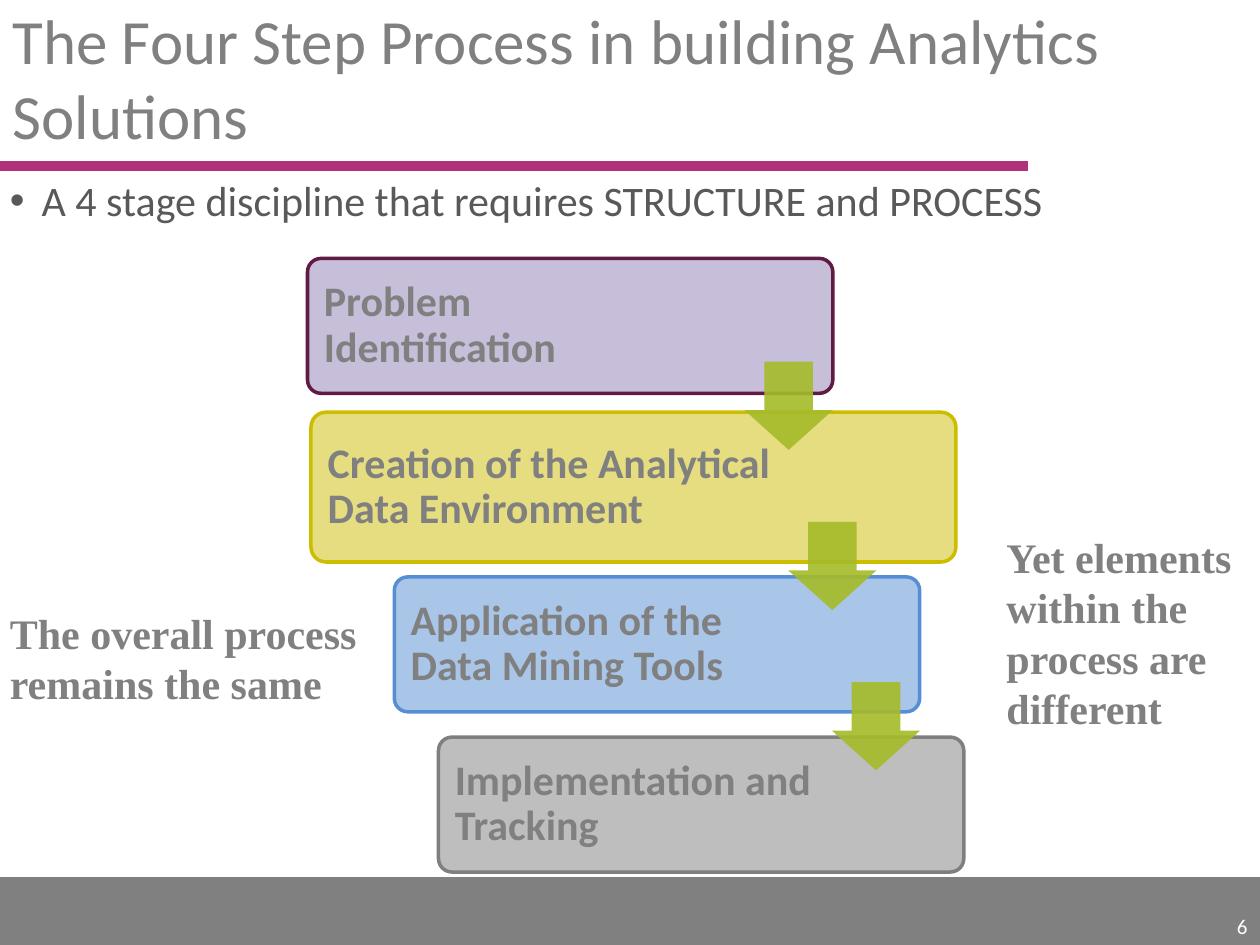
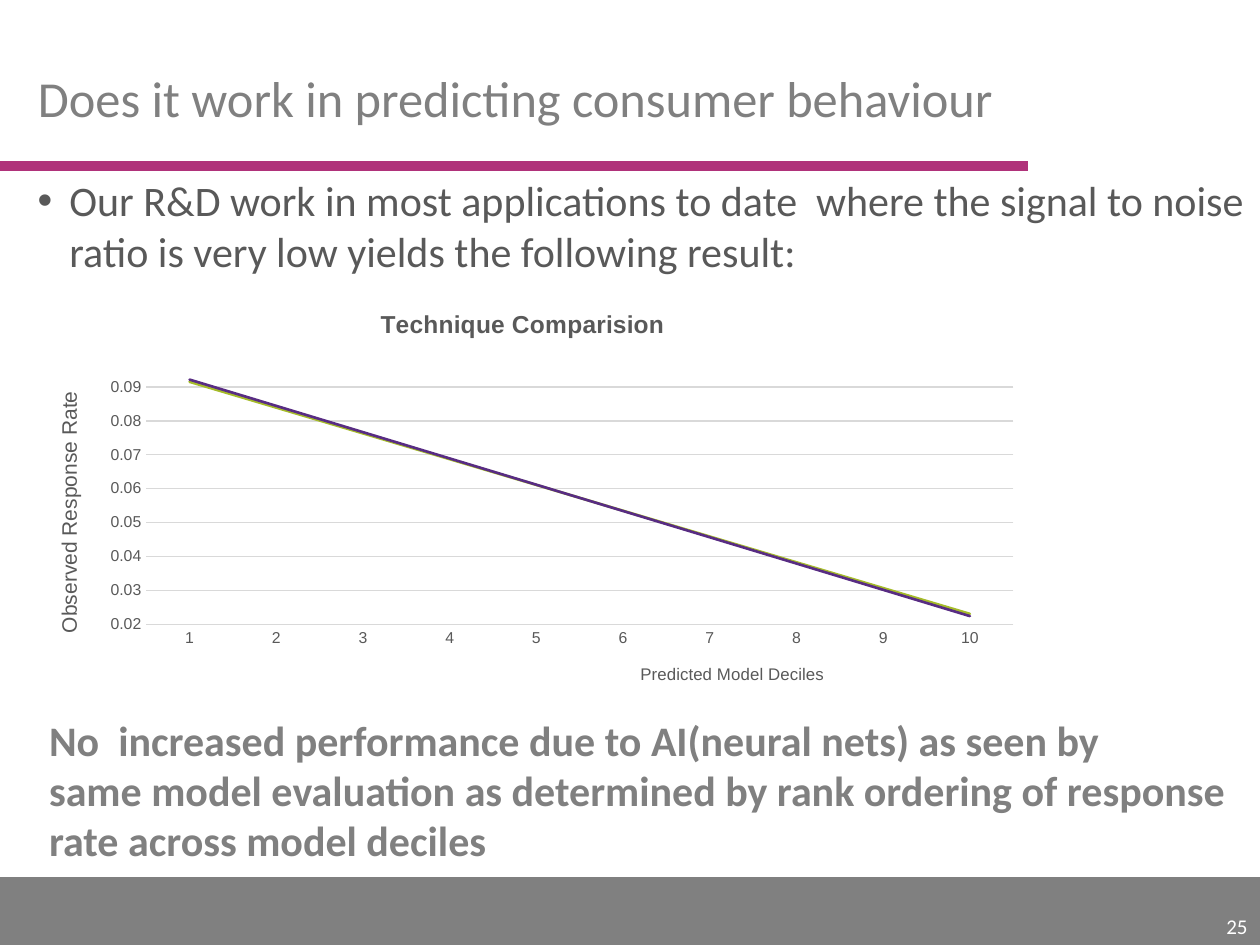
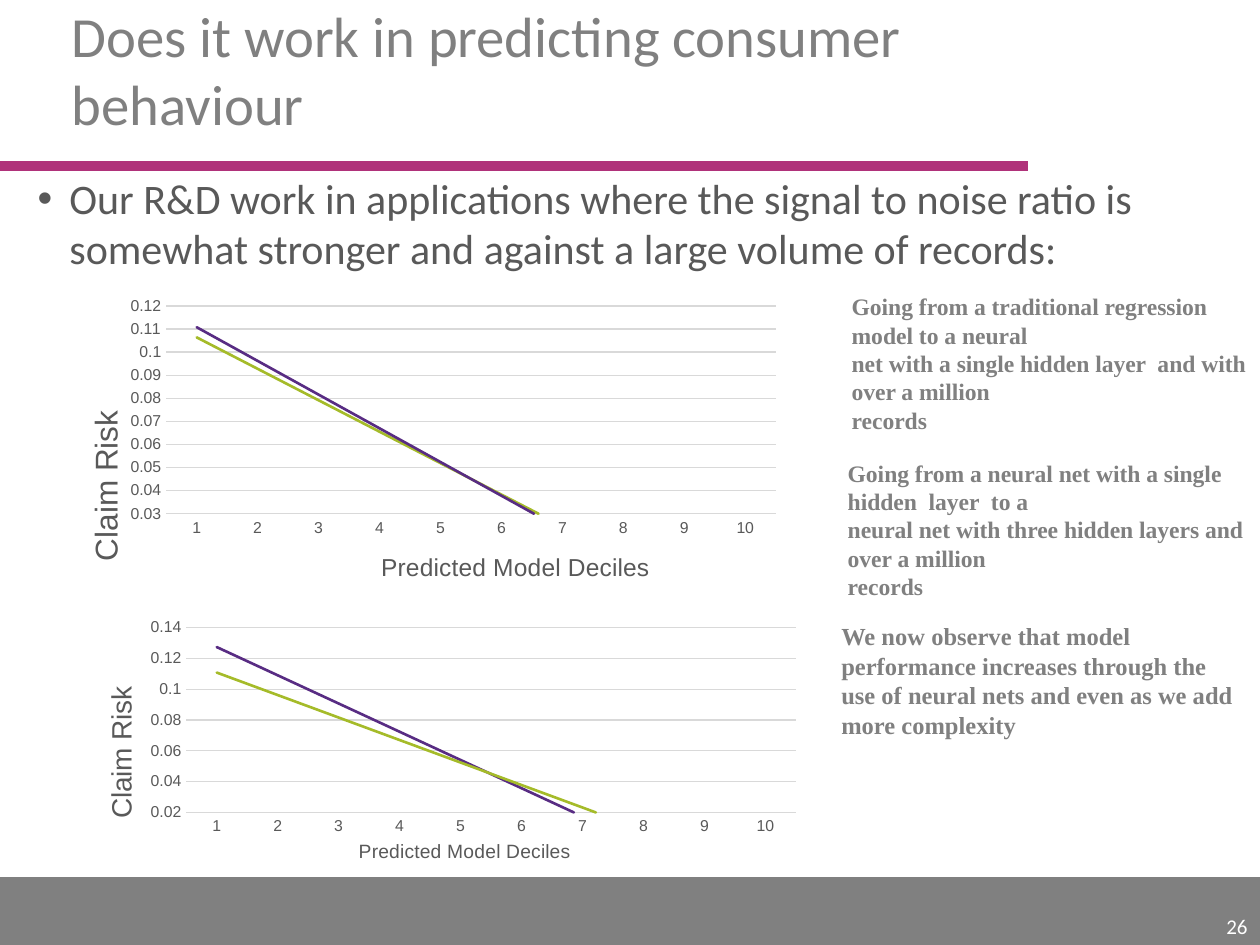
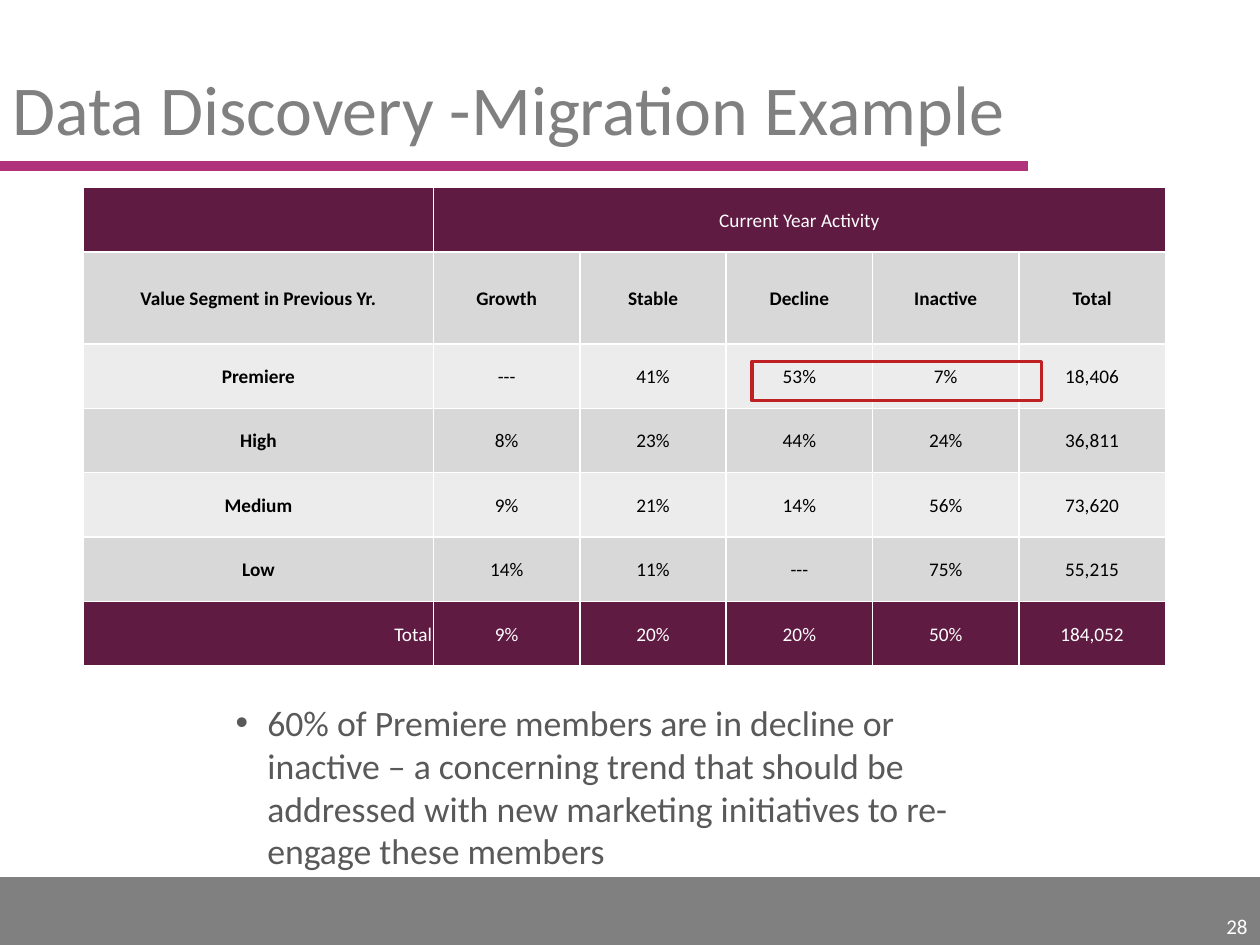
from typing import NamedTuple

from lxml.etree import SubElement
from pptx import Presentation
from pptx.chart.data import CategoryChartData
from pptx.dml.color import RGBColor
from pptx.enum.chart import XL_CHART_TYPE, XL_MARKER_STYLE, XL_TICK_MARK
from pptx.enum.shapes import MSO_CONNECTOR, MSO_SHAPE
from pptx.enum.text import MSO_ANCHOR, MSO_AUTO_SIZE, PP_ALIGN
from pptx.oxml import parse_xml
from pptx.oxml.ns import nsdecls, qn
from pptx.util import Cm, Pt

COLORS = {
    "grey": "808080",
    "text": "595959",
    "white": "FFFFFF",
    "black": "000000",
    "magenta": "B0327A",
    "plum": "5F1B42",
    "lilac": "917FB4",
    "mustard": "CCBD00",
    "blue": "558ED5",
    "mid_grey": "7F7F7F",
    "green": "A5BB29",
    "purple": "582C83",
    "grid": "D9D9D9",
    "band_dark": "D8D8D8",
    "band_light": "ECECEC",
    "red": "BF2024",
}
SANS = "Calibri"
SERIF = "Times New Roman"
CHART_FONT = "Arial"


class Box(NamedTuple):
    left: float
    top: float
    width: float
    height: float

    def lengths(self):
        return [Cm(value) for value in self]

    def inside(self, left, top, width, height):
        return Box(self.left + left, self.top + top, width, height)


def rgb(name):
    return RGBColor.from_string(COLORS[name])


def style_font(font, size, color, name=SANS, bold=False):
    font.size = Pt(size)
    font.name = name
    font.bold = bold
    font.color.rgb = rgb(color)


def write_text(frame, text, size, color, name=SANS, bold=False, align=PP_ALIGN.LEFT):
    frame.text = text
    for para in frame.paragraphs:
        para.alignment = align
        for span in para.runs:
            style_font(span.font, size, color, name, bold)


def add_text(page, box, text, size, color, name=SANS, bold=False,
             align=PP_ALIGN.LEFT, wrap=True):
    frame = page.shapes.add_textbox(*box.lengths()).text_frame
    frame.word_wrap = wrap
    write_text(frame, text, size, color, name, bold, align)
    return frame


def add_bullet(page, box, text, size=24):
    frame = add_text(page, box, text, size, "text")
    properties = frame.paragraphs[0]._p.get_or_add_pPr()
    properties.set("marL", str(Cm(0.64)))
    properties.set("indent", str(-Cm(0.64)))
    SubElement(properties, qn("a:buFont")).set("typeface", "Arial")
    SubElement(properties, qn("a:buChar")).set("char", "•")


def add_preset(page, preset, box, fill=None, line=None, line_width=2, opacity=100):
    shape = page.shapes.add_shape(preset, *box.lengths())
    shape.shadow.inherit = False
    if fill:
        shape.fill.solid()
        shape.fill.fore_color.rgb = rgb(fill)
        if opacity < 100:
            color = shape.element.xpath("p:spPr/a:solidFill/a:srgbClr")[0]
            SubElement(color, qn("a:alpha")).set("val", str(opacity * 1000))
    else:
        shape.fill.background()
    if line:
        shape.line.color.rgb = rgb(line)
        shape.line.width = Pt(line_width)
    else:
        shape.line.fill.background()
    return shape


def start_page(deck, number, title, title_box, title_size):
    page = deck.slides.add_slide(deck.slide_layouts[5])
    add_preset(page, MSO_SHAPE.RECTANGLE, Box(0, 17.7, 25.4, 1.35), "grey", "grey", 0.75)
    rule = page.shapes.add_connector(
        MSO_CONNECTOR.STRAIGHT, Cm(0), Cm(3.35), Cm(20.73), Cm(3.35))
    rule.line.color.rgb = rgb("magenta")
    rule.line.width = Pt(6)
    SubElement(rule.element.spPr, qn("a:effectLst"))

    heading = page.shapes.title
    heading.left, heading.top, heading.width, heading.height = title_box.lengths()
    frame = heading.text_frame
    frame.word_wrap = True
    frame.auto_size = MSO_AUTO_SIZE.NONE
    frame.vertical_anchor = MSO_ANCHOR.BOTTOM
    write_text(frame, title, title_size, "grey")

    footer = add_text(page, Box(20.12, 18.24, 5.28, 0.81), str(number), 12, "white",
                      align=PP_ALIGN.RIGHT)
    footer.vertical_anchor = MSO_ANCHOR.BOTTOM
    return page


def add_steps(page, box):
    steps = [
        ("Problem Identification", (0, 0, 10.59, 2.72), "lilac", "plum"),
        ("Creation of the Analytical Data Environment", (0.07, 3.1, 13, 3.02),
         "mustard", "mustard"),
        ("Application of the Data Mining Tools", (1.75, 6.42, 10.59, 2.72), "blue", "blue"),
        ("Implementation and Tracking", (2.64, 9.65, 10.59, 2.72), "mid_grey", "mid_grey"),
    ]
    for text, place, fill, line in steps:
        step = add_preset(page, MSO_SHAPE.ROUNDED_RECTANGLE, box.inside(*place),
                          fill, line, opacity=50)
        step.adjustments[0] = 0.1
        frame = step.text_frame
        frame.word_wrap = True
        frame.vertical_anchor = MSO_ANCHOR.MIDDLE
        frame.margin_left = Cm(0.25)
        frame.margin_right = Cm(2.9)
        write_text(frame, text, 24, "grey", bold=True)
        frame.paragraphs[0].line_spacing = 0.9
    for index in range(len(steps) - 1):
        place = box.inside(8.81 + 0.88 * index, 2.08 + 3.23 * index, 1.78, 1.78)
        arrow = add_preset(page, MSO_SHAPE.DOWN_ARROW, place, "green", opacity=90)
        arrow.adjustments[0] = 0.55
        arrow.adjustments[1] = 0.45


def place_in_chart(parent, index, x, y, width=None, height=None):
    present = parent.find(qn("c:layout"))
    if present is not None:
        parent.remove(present)
    layout = parse_xml(f"<c:layout {nsdecls('c')}><c:manualLayout/></c:layout>")
    entries = [("xMode", "edge"), ("yMode", "edge"), ("x", x), ("y", y)]
    if width:
        entries = [("layoutTarget", "inner")] + entries + [("w", width), ("h", height)]
    for tag, value in entries:
        SubElement(layout[0], qn(f"c:{tag}")).set("val", str(value))
    parent.insert(index, layout)


def write_chart_title(title, text, size, x, y, bold=False):
    write_text(title.text_frame, text, size, "text", CHART_FONT, bold, PP_ALIGN.CENTER)
    place_in_chart(title.element, 1, x, y)


def add_trend(series, color):
    series.smooth = False
    series.marker.style = XL_MARKER_STYLE.NONE
    series.format.line.fill.background()
    trend = parse_xml(
        f'<c:trendline {nsdecls("c", "a")}><c:spPr><a:ln w="{Pt(1.5)}" cap="rnd">'
        f'<a:solidFill><a:srgbClr val="{COLORS[color]}"/></a:solidFill></a:ln></c:spPr>'
        '<c:trendlineType val="linear"/><c:dispRSqr val="0"/><c:dispEq val="0"/>'
        '</c:trendline>')
    series._element.find(qn("c:cat")).addprevious(trend)


def add_decile_chart(page, box, plot, scale, series, value_title, category_title, title=None):
    data = CategoryChartData(number_format="General")
    data.categories = [str(decile) for decile in range(1, 11)]
    for index, (values, _) in enumerate(series, 1):
        data.add_series(f"Series {index}", values)
    chart = page.shapes.add_chart(XL_CHART_TYPE.LINE, *box.lengths(), data).chart
    style_font(chart.font, 10, "black", CHART_FONT)
    chart.has_legend = False
    chart.has_title = title is not None
    if title:
        write_chart_title(chart.chart_title, *title, bold=True)
    chart.plots[0].vary_by_categories = False
    for line, (_, color) in zip(chart.plots[0].series, series):
        add_trend(line, color)

    for axis in (chart.category_axis, chart.value_axis):
        axis.major_tick_mark = XL_TICK_MARK.NONE
        axis.minor_tick_mark = XL_TICK_MARK.NONE
        style_font(axis.tick_labels.font, 9, "text", CHART_FONT)
    chart.category_axis.format.line.color.rgb = rgb("grid")
    chart.category_axis.format.line.width = Pt(0.75)
    value_axis = chart.value_axis
    value_axis.minimum_scale, value_axis.maximum_scale, value_axis.major_unit = scale
    value_axis.format.line.fill.background()
    value_axis.has_major_gridlines = True
    value_axis.major_gridlines.format.line.color.rgb = rgb("grid")
    value_axis.major_gridlines.format.line.width = Pt(0.75)

    write_chart_title(chart.category_axis.axis_title, "Predicted Model Deciles", *category_title)
    write_chart_title(value_axis.axis_title, *value_title)
    rotation = value_axis.axis_title.element.xpath(".//a:bodyPr")[0]
    rotation.set("rot", "-5400000")
    rotation.set("vert", "horz")
    place_in_chart(chart.element.xpath("c:chart/c:plotArea")[0], 0, *plot)


def format_cell(cell, text, fill, color, bold, align):
    properties = cell._tc.get_or_add_tcPr()
    for side in ("lnL", "lnR", "lnT", "lnB"):
        border = SubElement(properties, qn(f"a:{side}"))
        border.set("w", str(Pt(1)))
        paint = SubElement(border, qn("a:solidFill"))
        SubElement(paint, qn("a:srgbClr")).set("val", COLORS["white"])
    cell.fill.solid()
    cell.fill.fore_color.rgb = rgb(fill)
    cell.margin_left = cell.margin_right = cell.margin_top = Cm(0.03)
    cell.margin_bottom = Cm(0)
    cell.vertical_anchor = MSO_ANCHOR.MIDDLE
    if text:
        write_text(cell.text_frame, text, 11, color, bold=bold, align=align)


def add_migration_table(page, box):
    rows = [
        ["", "Current Year Activity", "", "", "", ""],
        ["Value Segment in Previous Yr.", "Growth", "Stable", "Decline", "Inactive", "Total"],
        ["Premiere", "---", "41%", "53%", "7%", "18,406"],
        ["High", "8%", "23%", "44%", "24%", "36,811"],
        ["Medium", "9%", "21%", "14%", "56%", "73,620"],
        ["Low", "14%", "11%", "---", "75%", "55,215"],
        ["Total", "9%", "20%", "20%", "50%", "184,052"],
    ]
    last = len(rows) - 1
    table = page.shapes.add_table(len(rows), len(rows[0]), *box.lengths()).table
    table.first_row = False
    table.horz_banding = False
    for index, column in enumerate(table.columns):
        column.width = Cm(2.95 if index else 7.06)
    for index, row in enumerate(table.rows):
        row.height = Cm(1.85 if index == 1 else 1.3)
    table.cell(0, 1).merge(table.cell(0, 5))
    for row, texts in enumerate(rows):
        edge = row in (0, last)
        fill = "plum" if edge else "band_dark" if row % 2 else "band_light"
        for column, text in enumerate(texts):
            bold = not edge and (row == 1 or column == 0)
            align = PP_ALIGN.RIGHT if (row, column) == (last, 0) else PP_ALIGN.CENTER
            format_cell(table.cell(row, column), text, fill,
                        "white" if edge else "black", bold, align)
    add_preset(page, MSO_SHAPE.RECTANGLE, box.inside(13.48, 3.51, 5.84, 0.79), line="red")


def build_process(deck):
    page = start_page(deck, 6, "The Four Step Process in building Analytics Solutions",
                      Box(0, 1.09, 24.82, 2.11), 36)
    add_bullet(page, Box(-0.05, 3.4, 25.4, 1.3),
               "A 4 stage discipline that requires STRUCTURE and PROCESS")
    add_steps(page, Box(6.2, 5.21, 13.27, 12.37))
    add_text(page, Box(-0.05, 12.12, 7.57, 2.31),
             "The overall process\nremains the same", 24, "grey", SERIF, True, wrap=False)
    add_text(page, Box(20.04, 10.59, 5.28, 4.37),
             "Yet elements\nwithin the\nprocess are\ndifferent", 24, "grey", SERIF, True,
             wrap=False)


def build_low_signal(deck):
    page = start_page(deck, 25, "Does it work in predicting consumer behaviour",
                      Box(0.51, 0.58, 21.23, 2.11), 28.8)
    add_bullet(page, Box(0.51, 3.4, 24.89, 2.4),
               "Our R&D work in most applications to date  where the signal to noise "
               "ratio is very low yields the following result:")
    series = [
        ([0.103, 0.086, 0.08, 0.055, 0.047, 0.056, 0.045, 0.037, 0.033, 0.031], "green"),
        ([0.108, 0.08, 0.071, 0.07, 0.049, 0.051, 0.044, 0.038, 0.032, 0.03], "purple"),
    ]
    add_decile_chart(page, Box(0, 5.87, 21.06, 8.84), (0.14, 0.18, 0.83, 0.58),
                     (0.02, 0.095, 0.01), series,
                     ("Observed Response Rate", 12, 0.05, 0.22), (9.6, 0.61, 0.84),
                     ("Technique Comparision", 14, 0.36, 0.03))
    add_text(page, Box(0.74, 14.27, 24.46, 3.33),
             "No  increased performance due to AI(neural nets) as seen by\n"
             "same model evaluation as determined by rank ordering of response\n"
             "rate across model deciles", 24, "grey", bold=True, wrap=False)


def build_strong_signal(deck):
    page = start_page(deck, 26, "Does it work in predicting consumer behaviour",
                      Box(1.19, 0.58, 19.43, 2.31), 32.4)
    add_bullet(page, Box(0.51, 3.35, 24.89, 2.4),
               "Our R&D work in applications where the signal to noise ratio is somewhat "
               "stronger and against a large volume of records:")
    regression = [0.176, 0.078, 0.053, 0.04, 0.03, 0.023, 0.019, 0.012, 0.011, 0.009]
    one_layer = [0.217, 0.07, 0.042, 0.028, 0.021, 0.018, 0.015, 0.012, 0.013, 0.015]
    three_layers = [0.277, 0.056, 0.036, 0.027, 0.019, 0.009, 0.008, 0.008, 0.006, 0.003]
    add_decile_chart(page, Box(1.45, 5.77, 14.63, 6.65), (0.13, 0.06, 0.84, 0.63),
                     (0.03, 0.12, 0.01), [(regression, "green"), (one_layer, "purple")],
                     ("Claim Risk", 18, 0.01, 0.36), (14, 0.42, 0.79))
    add_decile_chart(page, Box(1.83, 11.43, 14.81, 6.43), (0.13, 0.19, 0.83, 0.58),
                     (0.02, 0.14, 0.02), [(three_layers, "purple"), (one_layer, "green")],
                     ("Claim Risk", 16, 0.01, 0.36), (11, 0.36, 0.84))
    notes = [
        ("Going from a traditional regression model to a neural\v"
         "net with a single hidden layer  and with over a million\vrecords",
         Box(16.92, 5.77, 8.48, 3.15), 13.5, True),
        ("Going from a neural net with a single hidden  layer  to a\n"
         "neural net with three hidden layers and over a million\vrecords",
         Box(16.84, 9.12, 9.09, 3.15), 13.5, True),
        ("We now observe that model\nperformance increases through the\v"
         "use of neural nets and even as we add\vmore complexity",
         Box(16.71, 12.4, 8.46, 2.64), 14, False),
    ]
    for text, box, size, wrap in notes:
        add_text(page, box, text, size, "grey", SERIF, True, wrap=wrap)


def build_migration(deck):
    page = start_page(deck, 28, "Data Discovery -Migration Example",
                      Box(0, 1.04, 21.23, 2.11), 40)
    add_bullet(page, Box(4.5, 14, 16.21, 3.18),
               "60% of Premiere members are in decline or inactive – a concerning trend "
               "that should be addressed with new marketing initiatives to re-engage "
               "these members", 20.4)
    add_migration_table(page, Box(1.68, 3.78, 21.81, 9.65))


def main():
    deck = Presentation()
    deck.slide_width = Cm(25.4)
    deck.slide_height = Cm(19.05)
    for build in (build_process, build_low_signal, build_strong_signal, build_migration):
        build(deck)
    deck.save("out.pptx")


if __name__ == "__main__":
    main()
